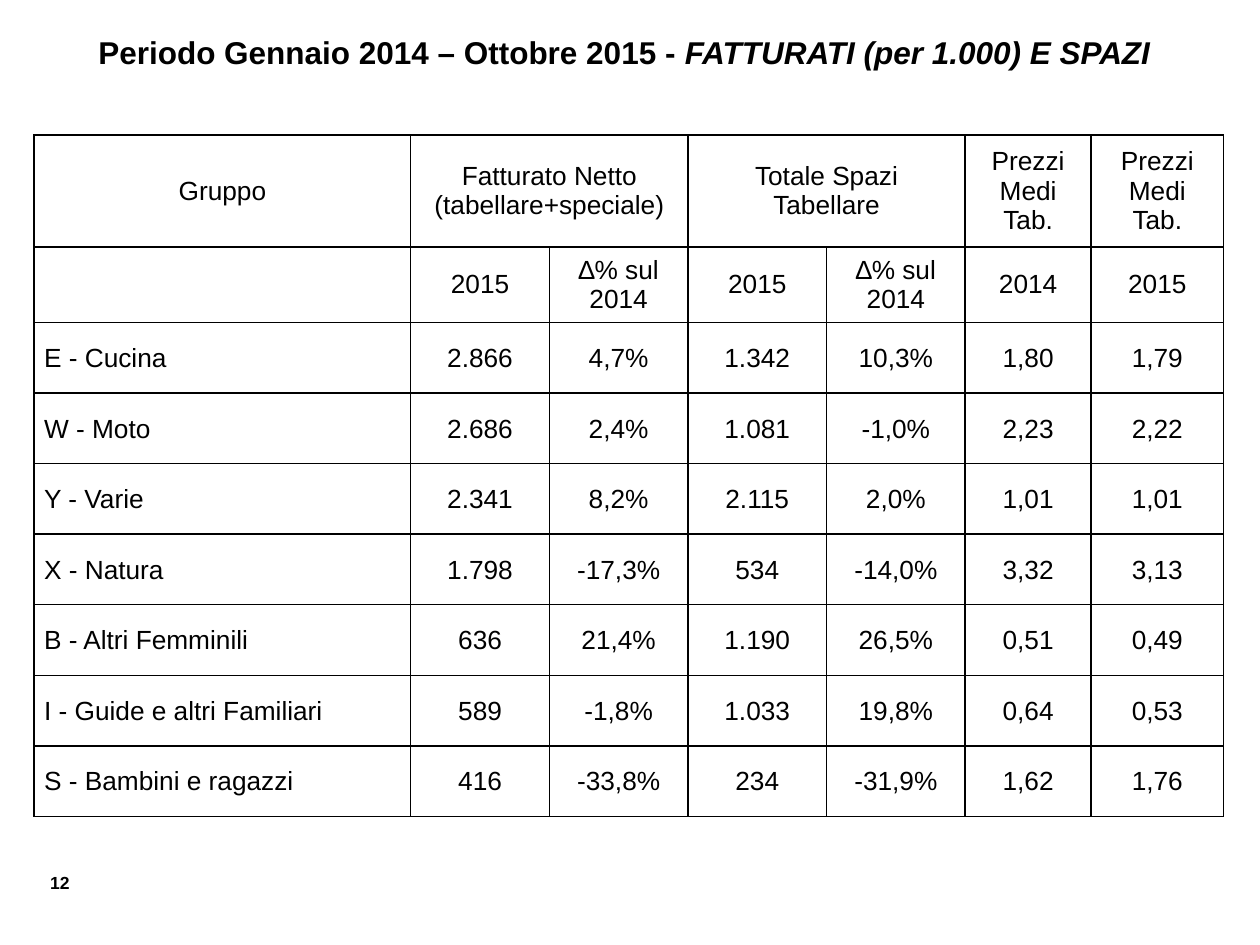
from lxml import etree
from pptx import Presentation
from pptx.dml.color import RGBColor
from pptx.enum.text import MSO_ANCHOR, PP_ALIGN
from pptx.oxml.ns import qn
from pptx.util import Inches, Pt

TOP, MIDDLE = MSO_ANCHOR.TOP, MSO_ANCHOR.MIDDLE
LEFT, CENTER, RIGHT = PP_ALIGN.LEFT, PP_ALIGN.CENTER, PP_ALIGN.RIGHT
TITLE_ONLY = 5
FONT = "Arial"
COLORS = {"ink": "000000", "border": "000000"}
COLUMN_WIDTHS = [2.99, 1.1, 1.1, 1.1, 1.1, 1, 1.05]
ROW_HEIGHTS = [0.89, 0.6] + [0.56] * 7
HEADER_MARGINS = (0.1, 0.05, 0.1, 0.05)
GROUP_MARGINS = (0.08, 0.01, 0.01, 0)
VALUE_MARGINS = (0.01, 0.01, 0.01, 0)
HEADER_ROWS = [
    ["Gruppo", "Fatturato Netto (tabellare+speciale)", "",
     "Totale Spazi Tabellare", "", "Prezzi Medi Tab.", "Prezzi Medi Tab."],
    ["", "2015", "∆% sul 2014", "2015", "∆% sul 2014", "2014", "2015"],
]
GROUP_ROWS = [
    ["E - Cucina", "2.866", "4,7%", "1.342", "10,3%", "1,80", "1,79"],
    ["W - Moto", "2.686", "2,4%", "1.081", "-1,0%", "2,23", "2,22"],
    ["Y - Varie", "2.341", "8,2%", "2.115", "2,0%", "1,01", "1,01"],
    ["X - Natura", "1.798", "-17,3%", "534", "-14,0%", "3,32", "3,13"],
    ["B - Altri Femminili", "636", "21,4%", "1.190", "26,5%", "0,51", "0,49"],
    ["I - Guide e altri Familiari", "589", "-1,8%", "1.033", "19,8%", "0,64", "0,53"],
    ["S - Bambini e ragazzi", "416", "-33,8%", "234", "-31,9%", "1,62", "1,76"],
]


def style_paragraph(paragraph, size, alignment, bold=False):
    paragraph.alignment = alignment
    paragraph.font.name = FONT
    paragraph.font.size = Pt(size)
    paragraph.font.bold = bold
    paragraph.font.color.rgb = RGBColor.from_string(COLORS["ink"])


def add_title(slide):
    title = slide.shapes.title
    title.left, title.top = Inches(0.27), Inches(0.21)
    title.width, title.height = Inches(9.37), Inches(0.71)
    title.text_frame.vertical_anchor = TOP
    heading = title.text_frame.paragraphs[0]
    heading.add_run().text = "Periodo Gennaio 2014 – Ottobre 2015 - "
    subject = heading.add_run()
    subject.text = "FATTURATI (per 1.000) E SPAZI"
    subject.font.italic = True
    style_paragraph(heading, 18, CENTER, bold=True)


def add_page_number(slide):
    box = slide.shapes.add_textbox(Inches(0.19), Inches(6.87), Inches(0.46), Inches(0.27))
    box.text_frame.word_wrap = True
    number = box.text_frame.paragraphs[0]
    number.text = "12"
    style_paragraph(number, 10, RIGHT, bold=True)


def add_borders(cell):
    properties = cell._tc.get_or_add_tcPr()
    for side in ("a:lnL", "a:lnR", "a:lnT", "a:lnB"):
        line = etree.SubElement(properties, qn(side), w=str(Pt(1)))
        fill = etree.SubElement(line, qn("a:solidFill"))
        etree.SubElement(fill, qn("a:srgbClr"), val=COLORS["border"])


def fill_cell(cell, text, margins, alignment):
    add_borders(cell)
    cell.fill.background()
    cell.vertical_anchor = MIDDLE
    (cell.margin_left, cell.margin_top,
     cell.margin_right, cell.margin_bottom) = map(Inches, margins)
    cell.text = text
    style_paragraph(cell.text_frame.paragraphs[0], 15, alignment)


def add_sales_table(slide):
    rows = HEADER_ROWS + GROUP_ROWS
    table = slide.shapes.add_table(
        len(rows), len(COLUMN_WIDTHS), Inches(0.27), Inches(1.07),
        Inches(sum(COLUMN_WIDTHS)), Inches(sum(ROW_HEIGHTS))).table
    table.first_row = table.horz_banding = False
    for column, width in zip(table.columns, COLUMN_WIDTHS):
        column.width = Inches(width)
    for row, height in zip(table.rows, ROW_HEIGHTS):
        row.height = Inches(height)
    for r, texts in enumerate(rows):
        for c, text in enumerate(texts):
            if r < len(HEADER_ROWS):
                margins, alignment = HEADER_MARGINS, CENTER
            elif c == 0:
                margins, alignment = GROUP_MARGINS, LEFT
            else:
                margins, alignment = VALUE_MARGINS, CENTER
            fill_cell(table.cell(r, c), text, margins, alignment)
    for c in (1, 3):
        table.cell(0, c).merge(table.cell(0, c + 1))


def main():
    """Build the slide on group revenue, space and average prices."""
    deck = Presentation()
    deck.slide_width, deck.slide_height = Inches(10), Inches(7.5)
    slide = deck.slides.add_slide(deck.slide_layouts[TITLE_ONLY])
    add_page_number(slide)
    add_title(slide)
    add_sales_table(slide)
    deck.save("out.pptx")


if __name__ == "__main__":
    main()
